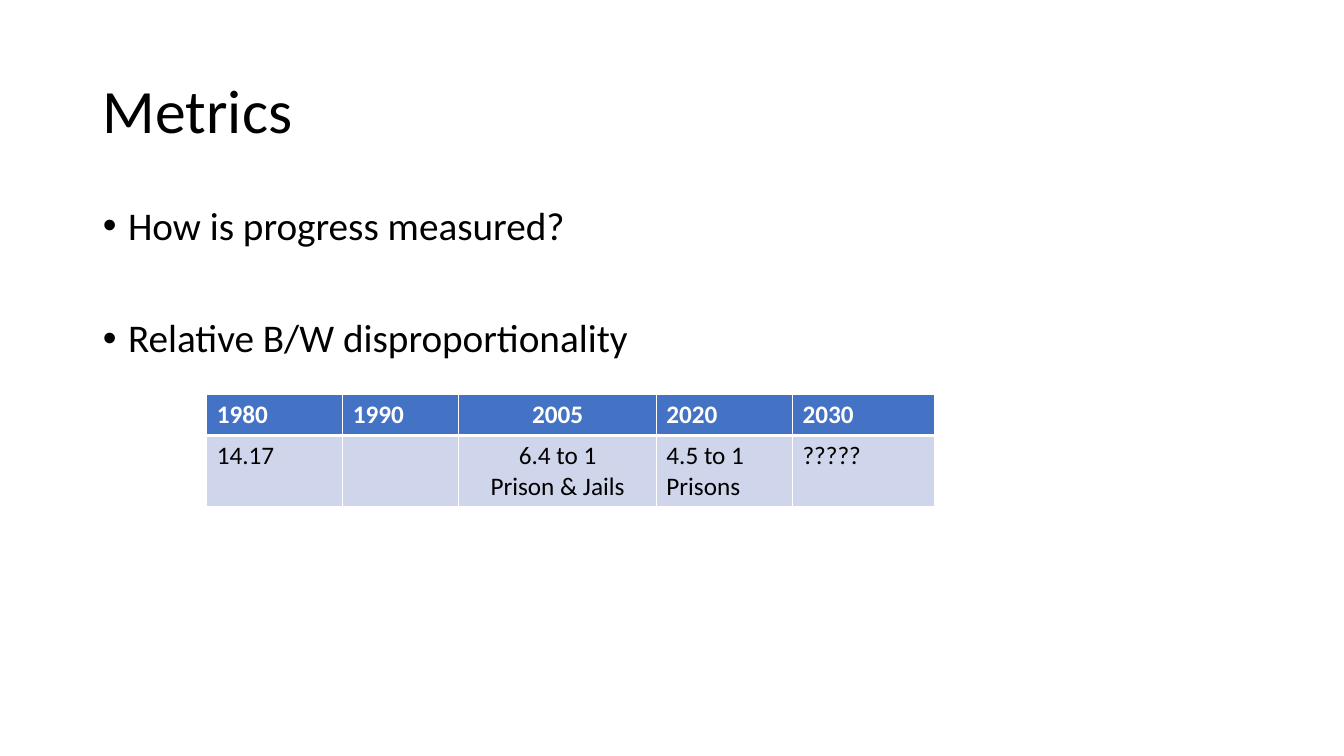
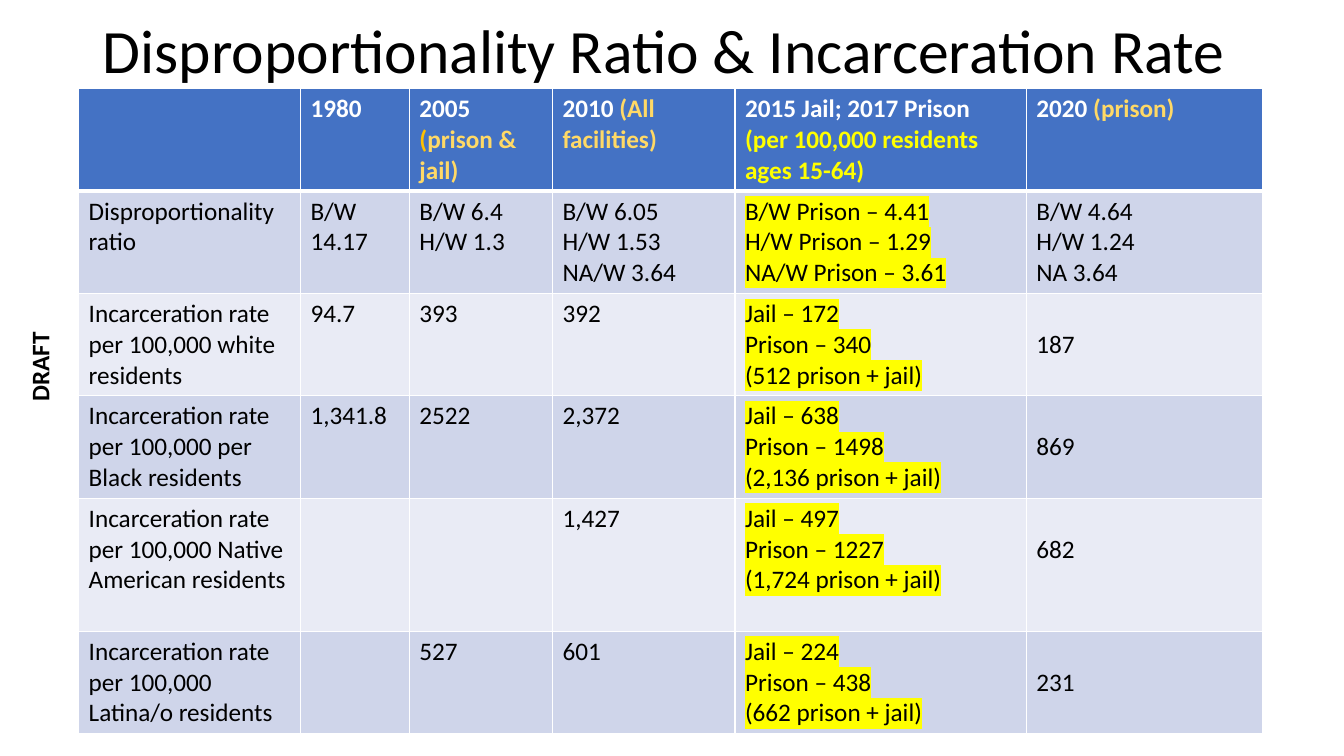
from lxml import etree
from pptx import Presentation
from pptx.dml.color import RGBColor
from pptx.enum.text import MSO_ANCHOR, PP_ALIGN
from pptx.oxml.ns import qn
from pptx.util import Inches, Pt

LEFT, CENTER = PP_ALIGN.LEFT, PP_ALIGN.CENTER
MIDDLE = MSO_ANCHOR.MIDDLE

FONT = "Calibri"
BLACK = RGBColor(0x00, 0x00, 0x00)
WHITE = RGBColor(0xFF, 0xFF, 0xFF)
HEADER_BLUE = RGBColor(0x44, 0x72, 0xC4)
BAND_DARK = RGBColor(0xCF, 0xD5, 0xEA)
BAND_LIGHT = RGBColor(0xE9, 0xEB, 0xF5)
GOLD = RGBColor(0xFF, 0xD9, 0x66)
AMBER = RGBColor(0xFF, 0xC0, 0x00)
YELLOW = RGBColor(0xFF, 0xFF, 0x00)

MARGIN, CONTENT_WIDTH, TITLE_HEIGHT = 0.92, 11.5, 1.45
LINE_HEIGHT = 0.305  # one line of 18 point table text


def write(text_frame, content, size=18, color=BLACK, bold=False, align=LEFT,
          spacing=None, highlight=None):
    """Write lines split by newlines, or a list of lines made of (text, color) runs."""
    lines = content
    if isinstance(content, str):
        lines = [[(line, color)] for line in content.split("\n")]
    for index, line in enumerate(lines):
        paragraph = text_frame.paragraphs[0] if index == 0 else text_frame.add_paragraph()
        paragraph.alignment = align
        if spacing:
            paragraph.line_spacing = spacing
        for text, run_color in line:
            run = paragraph.add_run()
            run.text = text
            run.font.name, run.font.size, run.font.bold = FONT, Pt(size), bold
            run.font.color.rgb = run_color
            if highlight:
                mark = etree.Element(qn("a:highlight"))
                etree.SubElement(mark, qn("a:srgbClr"), val=str(highlight))
                run.font._element.find(qn("a:solidFill")).addnext(mark)


def add_grid(slide, left, top, widths, heights, rows, centered=(), highlighted=(), lowered=()):
    """Add a table with a blue header, banded rows and white borders."""
    table = slide.shapes.add_table(
        len(rows), len(widths), Inches(left), Inches(top),
        Inches(sum(widths)), Inches(sum(heights))).table
    for column, width in zip(table.columns, widths):
        column.width = Inches(width)
    for row, height in zip(table.rows, heights):
        row.height = Inches(height)
    for r, row in enumerate(rows):
        header = r == 0
        for c, content in enumerate(row):
            cell = table.cell(r, c)
            properties = cell._tc.get_or_add_tcPr()
            thick_sides = {0: "B", 1: "T"}.get(r, "")
            for side in "LRTB":
                width = Pt(3) if side == thick_sides else Pt(1)
                border = etree.SubElement(properties, qn("a:ln" + side), w=str(width))
                fill = etree.SubElement(border, qn("a:solidFill"))
                etree.SubElement(fill, qn("a:srgbClr"), val=str(WHITE))
            cell.fill.solid()
            cell.fill.fore_color.rgb = (
                HEADER_BLUE if header else BAND_DARK if r % 2 else BAND_LIGHT)
            if (r, c) in lowered:
                cell.margin_top = Inches(0.05 + LINE_HEIGHT)
            if content:
                write(cell.text_frame, content, color=WHITE if header else BLACK, bold=header,
                      align=CENTER if c in centered else LEFT,
                      highlight=YELLOW if c in highlighted and not header else None)


presentation = Presentation()
presentation.slide_width = Inches(13.33)
presentation.slide_height = Inches(7.5)
content_layout, title_only_layout = presentation.slide_layouts[1], presentation.slide_layouts[5]

# Both slides and their titles
slides = []
for layout, title_text, title_top in [
        (content_layout, "Metrics", 0.4),
        (title_only_layout, "Disproportionality Ratio & Incarceration Rate", -0.19)]:
    slide = presentation.slides.add_slide(layout)
    title = slide.shapes.title
    title.left, title.top = Inches(MARGIN), Inches(title_top)
    title.width, title.height = Inches(CONTENT_WIDTH), Inches(TITLE_HEIGHT)
    title.text_frame.vertical_anchor = MIDDLE
    write(title.text_frame, title_text, size=44, spacing=0.9)
    slides.append(slide)
metrics_slide, rates_slide = slides

# Metrics: bullets
body = metrics_slide.placeholders[1]
body.left, body.top = Inches(MARGIN), Inches(2)
body.width, body.height = Inches(CONTENT_WIDTH), Inches(4.76)
write(body.text_frame, "How is progress measured?\nRelative B/W disproportionality",
      size=28, spacing=0.9)
for paragraph, space_before in zip(body.text_frame.paragraphs, (10, 50)):
    paragraph.space_before = Pt(space_before)
    properties = paragraph._p.get_or_add_pPr()
    properties.set("marL", str(Inches(0.25)))
    properties.set("indent", str(-Inches(0.25)))

# Metrics: ratio by year
add_grid(metrics_slide, 2.05, 3.91, [1.35, 1.15, 1.96, 1.35, 1.41], [0.41, 0.7], [
    ["1980", "1990", "2005", "2020", "2030"],
    ["14.17", "", "6.4 to 1\nPrison & Jails", "4.5 to 1\nPrisons", "?????"],
], centered=[2])

# Rates: ratio and rate by group and year
rate_label = "Incarceration rate per 100,000 "
rate_rows = [
    ["",
     "1980",
     [[("2005 ", WHITE), ("(", AMBER), ("prison & jail)", GOLD)]],
     [[("2010", WHITE), (" (All", GOLD)], [("facilities)", GOLD)]],
     [[("2015 Jail; 2017 Prison ", WHITE), ("(per 100,000 residents ages 15-64)", YELLOW)]],
     [[("2020 ", WHITE), ("(prison)", GOLD)]]],
    ["Disproportionality ratio", "B/W 14.17", "B/W 6.4\nH/W 1.3",
     "B/W 6.05\nH/W 1.53\nNA/W 3.64",
     "B/W Prison – 4.41\nH/W Prison – 1.29\nNA/W Prison – 3.61",
     "B/W 4.64\nH/W 1.24\nNA 3.64"],
]
for group, rate_1980, rate_2005, rate_2010, jail, prison, total, rate_2020 in [
        ("white residents", "94.7", "393", "392", "172", "340", "512", "187"),
        ("per Black residents", "1,341.8", "2522", "2,372", "638", "1498", "2,136", "869"),
        ("Native American residents", "", "", "1,427", "497", "1227", "1,724", "682"),
        ("Latina/o residents", "", "527", "601", "224", "438", "662", "231")]:
    rate_rows.append([
        rate_label + group, rate_1980, rate_2005, rate_2010,
        f"Jail – {jail}\nPrison – {prison}\n({total} prison + jail)", rate_2020])
add_grid(rates_slide, 0.78, 0.88, [2.2, 1.08, 1.42, 1.81, 2.89, 2.34],
         [1.01, 1.01, 1.01, 1.01, 1.32, 1.01], rate_rows,
         highlighted=[4], lowered=[(r, 5) for r in range(2, 6)])

# Rates: draft mark along the left edge
draft = rates_slide.shapes.add_textbox(Inches(-0.06), Inches(3.43), Inches(0.9), Inches(0.4))
draft.rotation = 270
draft.text_frame.word_wrap = False
write(draft.text_frame, "DRAFT", bold=True)

presentation.save("out.pptx")
